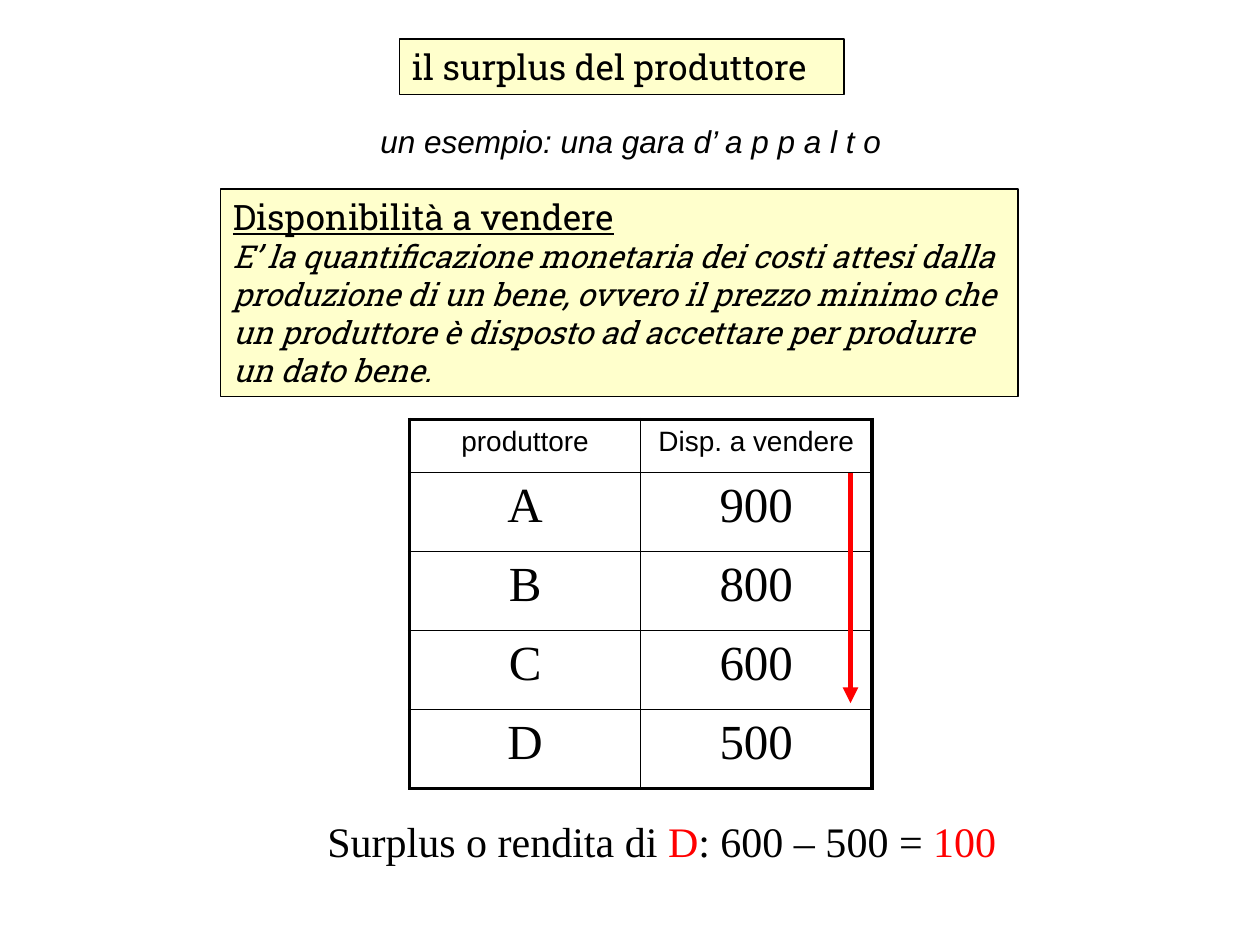
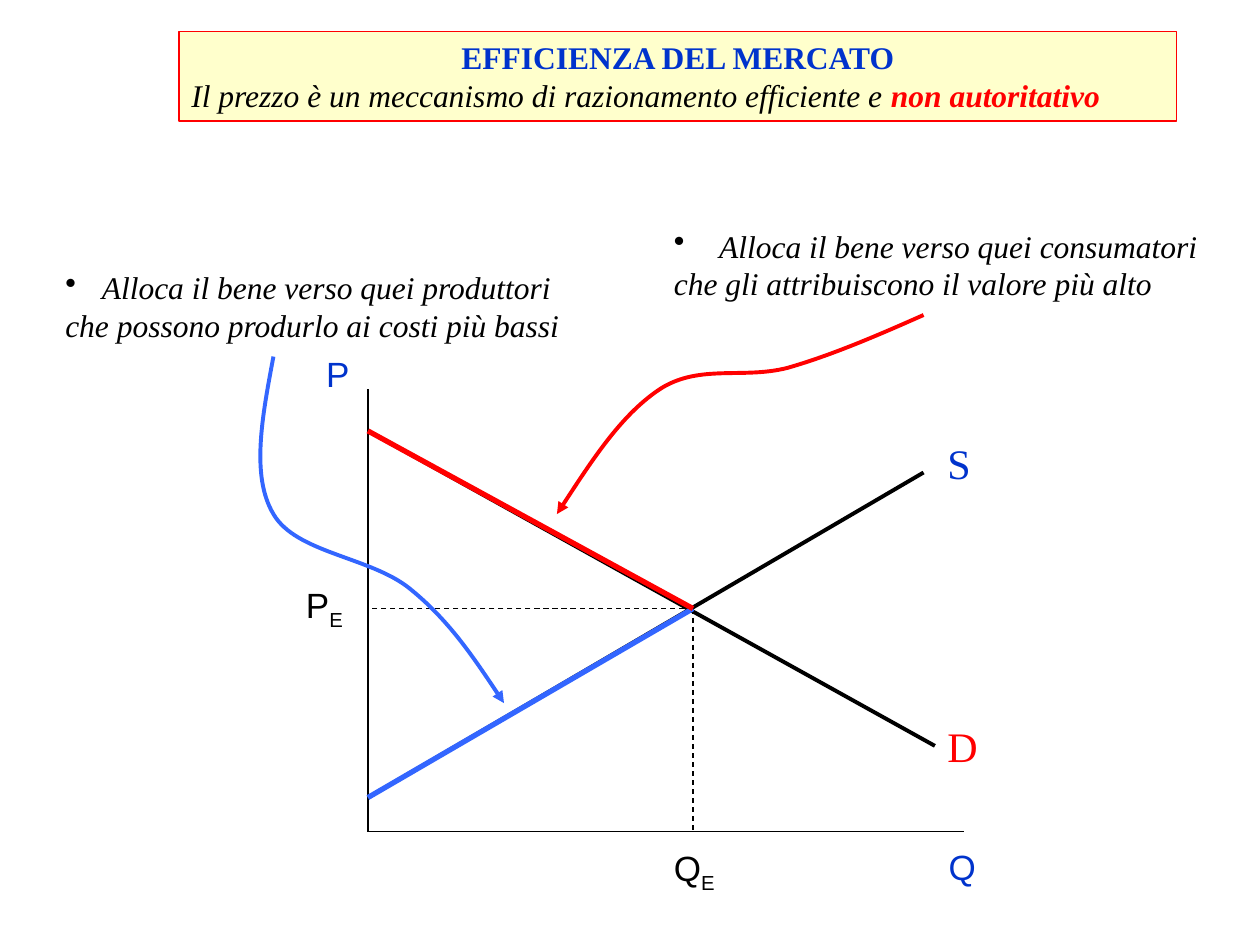
from typing import NamedTuple

from lxml.etree import SubElement
from pptx import Presentation
from pptx.dml.color import RGBColor
from pptx.enum.dml import MSO_LINE
from pptx.enum.shapes import MSO_CONNECTOR, MSO_SHAPE
from pptx.enum.text import MSO_AUTO_SIZE, PP_ALIGN
from pptx.oxml.ns import qn
from pptx.util import Inches, Pt

BLACK, RED, BLUE, LIGHT_BLUE = "000000", "FF0000", "0033CC", "3366FF"
CREAM = "FFFFCC"
SERIF, SANS, SLAB = "Times New Roman", "Arial", "Roboto Slab"


class Box(NamedTuple):
    left: float
    top: float
    width: float
    height: float

    def inner(self, left, top, width, height):
        """Box placed by an offset from this one."""
        return Box(self.left + left, self.top + top, width, height)

    def point(self, x, y):
        return self.left + x, self.top + y


class Words(NamedTuple):
    text: str
    size: float
    font: str
    color: str = BLACK
    bold: bool = False
    italic: bool = False
    underline: bool = False
    subscript: bool = False


def rgb(color):
    return RGBColor.from_string(color)


def inches(values):
    return [Inches(value) for value in values]


def write(paragraph, pieces):
    for piece in pieces:
        run = paragraph.add_run()
        run.text = piece.text
        font = run.font
        font.name, font.size = piece.font, Pt(piece.size)
        font.bold, font.italic = piece.bold, piece.italic
        font.underline = piece.underline
        font.color.rgb = rgb(piece.color)
        if piece.subscript:
            run._r.get_or_add_rPr().set("baseline", "-25000")


def fill_frame(frame, paragraphs, wrap):
    """Write one paragraph for each list of words."""
    frame.word_wrap = wrap
    frame.auto_size = MSO_AUTO_SIZE.SHAPE_TO_FIT_TEXT
    for index, pieces in enumerate(paragraphs):
        paragraph = frame.add_paragraph() if index else frame.paragraphs[0]
        paragraph.alignment = PP_ALIGN.LEFT
        write(paragraph, pieces)
    return frame


def add_label(slide, box, *paragraphs):
    label = slide.shapes.add_textbox(*inches(box))
    return fill_frame(label.text_frame, paragraphs, wrap=False)


def add_panel(slide, box, *paragraphs, border=BLACK, wrap=True):
    """Cream rectangle with a thin border and text."""
    panel = slide.shapes.add_shape(MSO_SHAPE.RECTANGLE, *inches(box))
    panel.shadow.inherit = False
    panel.fill.solid()
    panel.fill.fore_color.rgb = rgb(CREAM)
    panel.line.color.rgb = rgb(border)
    panel.line.width = Pt(0.75)
    frame = fill_frame(panel.text_frame, paragraphs, wrap)
    frame.vertical_anchor = 1
    return frame


def style_line(line, color, width, arrow=False, dashed=False):
    line.color.rgb = rgb(color)
    line.width = Pt(width)
    if dashed:
        line.dash_style = MSO_LINE.DASH
    if arrow:
        SubElement(line._get_or_add_ln(), qn("a:tailEnd"), type="triangle")


def add_line(slide, start, end, color=BLACK, width=0.75, **style):
    line = slide.shapes.add_connector(MSO_CONNECTOR.STRAIGHT, *inches(start + end))
    SubElement(line._element.spPr, qn("a:effectLst"))
    style_line(line.line, color, width, **style)


def add_curved_arrow(slide, points, color):
    """Start point, then three Bezier points for each arc."""
    start, *rest = [tuple(inches(point)) for point in points]
    builder = slide.shapes.build_freeform(*start)
    builder.add_line_segments(rest, close=False)
    arrow = builder.convert_to_shape()
    outline = arrow._element.xpath(".//a:path")[0]
    steps = outline.findall(qn("a:lnTo"))
    for first in range(0, len(steps), 3):
        arc = SubElement(outline, qn("a:cubicBezTo"))
        for step in steps[first:first + 3]:
            arc.append(step[0])
            outline.remove(step)
    arrow.shadow.inherit = False
    arrow.fill.background()
    style_line(arrow.line, color, 2.25, arrow=True)


def add_border(cell, side, width):
    edge = SubElement(cell._tc.get_or_add_tcPr(), qn(f"a:ln{side}"), w=str(Pt(width)))
    paint = SubElement(edge, qn("a:solidFill"))
    SubElement(paint, qn("a:srgbClr"), val=BLACK)


def add_bids(slide, box):
    """Table of producers, with an arrow down the falling bids."""
    rows = [("produttore", "Disp. a vendere"),
            ("A", "900"), ("B", "800"), ("C", "600"), ("D", "500")]
    head_height = 0.42
    row_height = (box.height - head_height) / (len(rows) - 1)
    table = slide.shapes.add_table(len(rows), 2, *inches(box)).table
    table.first_row = table.horz_banding = False
    for column in table.columns:
        column.width = Inches(box.width / 2)
    last_row = len(rows) - 1
    for r, values in enumerate(rows):
        table.rows[r].height = Inches(row_height if r else head_height)
        for c, value in enumerate(values):
            cell = table.cell(r, c)
            outer = {"L": c == 0, "R": c == 1, "T": r == 0, "B": r == last_row}
            for side, is_outer in outer.items():
                add_border(cell, side, 2.25 if is_outer else 1)
            cell.fill.background()
            paragraph = cell.text_frame.paragraphs[0]
            paragraph.alignment = PP_ALIGN.CENTER
            write(paragraph, [Words(value, 28, SERIF) if r else Words(value, 16, SANS)])
    add_line(slide, box.point(3.5, head_height), box.point(3.5, 2.25),
             RED, 3, arrow=True)


def build_surplus(slide):
    add_panel(slide, Box(3.17, 0.31, 3.53, 0.44),
              [Words("il surplus del produttore", 20, SLAB)], wrap=False)
    add_bids(slide, Box(3.25, 3.33, 3.67, 2.93))
    add_label(slide, Box(2.92, 0.92, 4.19, 0.4),
              [Words("un esempio: una gara d’ a p p a l t o", 18, SANS, italic=True)])
    add_panel(slide, Box(1.75, 1.5, 6.33, 1.65),
              [Words("Disponibilità a vendere", 20, SLAB, underline=True)],
              [Words("E’ la quantificazione monetaria dei costi attesi dalla "
                     "produzione di un bene, ovvero il prezzo minimo che un "
                     "produttore è disposto ad accettare per produrre un dato bene.",
                     18, SLAB, italic=True)])
    add_label(slide, Box(2.5, 6.42, 5.59, 0.5),
              [Words("Surplus o rendita di ", 24, SERIF), Words("D", 24, SERIF, RED),
               Words(": 600 – 500 = ", 24, SERIF), Words("100", 24, SERIF, RED)])


def add_market(slide, box):
    """Supply and demand; the box spans the two axes."""
    origin = box.point(0, box.height)
    equilibrium = box.point(2.58, 1.74)
    demand_start, supply_start = box.point(0, 0.33), box.point(0, 3.24)

    add_line(slide, supply_start, box.point(4.41, 0.66), width=2.25)
    add_line(slide, demand_start, box.point(4.5, 2.83), width=2.25)
    add_line(slide, box.point(0, 0), origin)
    add_line(slide, origin, box.point(box.width, box.height))
    add_line(slide, equilibrium, box.point(0, 1.74), dashed=True)
    add_line(slide, equilibrium, box.point(2.58, box.height), dashed=True)
    add_line(slide, supply_start, equilibrium, LIGHT_BLUE, 3)
    add_line(slide, demand_start, equilibrium, RED, 3)

    for left, top, width, name, color in [(4.5, 0.33, 0.39, "S", BLUE),
                                          (4.5, 2.58, 0.44, "D", RED)]:
        add_label(slide, box.inner(left, top, width, 0.5),
                  [Words(name, 24, SERIF, color)])
    for left, top, width, name in [(-0.43, -0.34, 0.39, "P"), (4.51, 3.57, 0.42, "Q")]:
        add_label(slide, box.inner(left, top, width, 0.43),
                  [Words(name, 20, SANS, BLUE)])
    for left, top, width, name in [(-0.59, 1.49, 0.51, "P"), (2.33, 3.58, 0.54, "Q")]:
        add_label(slide, box.inner(left, top, width, 0.43),
                  [Words(name, 20, SANS), Words("E", 20, SANS, subscript=True)])


def add_remark(slide, box, lines, indent, curve, color):
    """Bulleted remark with a curved arrow to its part of the market."""
    frame = add_label(slide, box,
                      *[[Words(line, 18, SERIF, italic=True)] for line in lines])
    bulleted = frame.paragraphs[0]._p.get_or_add_pPr()
    bulleted.set("marL", str(Inches(indent)))
    bulleted.set("indent", str(-Inches(indent)))
    SubElement(bulleted, qn("a:buChar"), char="•")
    add_curved_arrow(slide, [box.point(*point) for point in curve], color)


def build_efficiency(slide):
    heading = add_panel(
        slide, Box(1.42, 0.25, 7.92, 0.71),
        [Words("EFFICIENZA DEL MERCATO", 18, SERIF, BLUE, bold=True)],
        [Words("Il prezzo è un meccanismo di razionamento efficiente e ",
               18, SERIF, italic=True),
         Words("non autoritativo", 18, SERIF, RED, bold=True, italic=True)],
        border=RED)
    heading.paragraphs[0].alignment = PP_ALIGN.CENTER
    add_market(slide, Box(2.92, 3.09, 4.73, 3.51))
    add_remark(slide, Box(0.42, 2.08, 4.13, 0.7),
               ["Alloca il bene verso quei produttori",
                "che possono produrlo ai costi più bassi"], 0.29,
               [(1.75, 0.75), (1.66, 1.23), (1.57, 1.7), (1.75, 2),
                (1.93, 2.31), (2.52, 2.34), (2.83, 2.59),
                (3.14, 2.84), (3.36, 3.17), (3.58, 3.5)], LIGHT_BLUE)
    add_remark(slide, Box(5.25, 1.75, 4.37, 0.7),
               ["Alloca il bene verso quei consumatori",
                "che gli attribuiscono il valore più alto"], 0.36,
               [(2.08, 0.75), (1.72, 0.91), (1.35, 1.07), (1, 1.17),
                (0.65, 1.26), (0.31, 1.14), (0, 1.33),
                (-0.31, 1.53), (-0.57, 1.93), (-0.83, 2.33)], RED)


def main():
    deck = Presentation()
    deck.slide_width, deck.slide_height = Inches(10), Inches(7.5)
    for build in (build_surplus, build_efficiency):
        build(deck.slides.add_slide(deck.slide_layouts[6]))
    deck.save("out.pptx")


if __name__ == "__main__":
    main()
